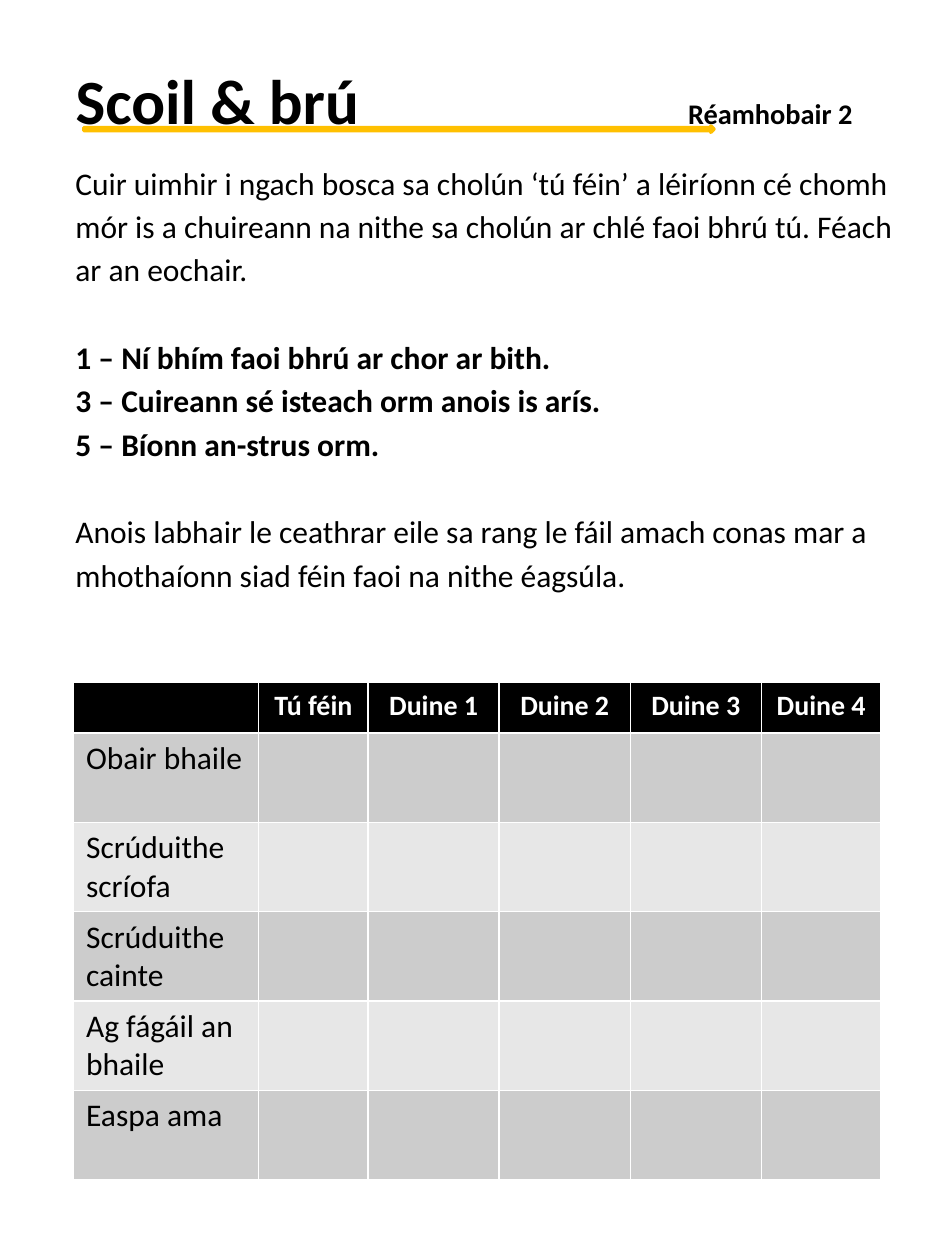
import pptx
import pptx.dml.color
import pptx.enum.shapes
import pptx.enum.text
import pptx.util
from lxml import etree

Pt = pptx.util.Pt
PP_ALIGN = pptx.enum.text.PP_ALIGN
COLOURS = {
    "text": "000000",
    "header_text": "FFFFFF",
    "header": "000000",
    "dark_row": "CCCCCC",
    "light_row": "E7E7E7",
    "arrow": "FFFF00",
    "arrow_line": "FFC000",
}


def colour(name):
    return pptx.dml.color.RGBColor.from_string(COLOURS[name])


def add_text(paragraph, text, size=18, bold=False, ink="text", align=PP_ALIGN.LEFT, before=0):
    """Append a formatted run and set the paragraph's alignment and spacing."""
    paragraph.alignment = align
    paragraph.space_before = Pt(before)
    run = paragraph.add_run()
    run.text = text
    run.font.name = "Calibri"
    run.font.size = Pt(size)
    run.font.bold = bold
    run.font.color.rgb = colour(ink)


presentation = pptx.Presentation()
presentation.slide_width = Pt(540)
presentation.slide_height = Pt(720)
slide = presentation.slides.add_slide(presentation.slide_layouts[5])

# Instructions: text, bold, starts a new block
instructions = [
    ("Cuir uimhir i ngach bosca sa cholún ‘tú féin’ a léiríonn cé chomh", False, False),
    ("mór is a chuireann na nithe sa cholún ar chlé faoi bhrú tú. Féach", False, False),
    ("ar an eochair.", False, False),
    ("1 – Ní bhím faoi bhrú ar chor ar bith.", True, True),
    ("3 – Cuireann sé isteach orm anois is arís.", True, False),
    ("5 – Bíonn an-strus orm.", True, False),
    ("Anois labhair le ceathrar eile sa rang le fáil amach conas mar a", False, True),
    ("mhothaíonn siad féin faoi na nithe éagsúla.", False, False),
]
body = slide.shapes.add_textbox(Pt(36), Pt(90), Pt(486), Pt(282)).text_frame
body.word_wrap = True
for index, (text, bold, new_block) in enumerate(instructions):
    paragraph = body.add_paragraph() if index else body.paragraphs[0]
    add_text(paragraph, text, bold=bold, before=28.4 if new_block else 3.2)

# Thin arrow under the title
arrow = slide.shapes.add_shape(
    pptx.enum.shapes.MSO_SHAPE.RIGHT_ARROW, Pt(48), Pt(72), Pt(360), Pt(3.6))
arrow.shadow.inherit = False
arrow.fill.solid()
arrow.fill.fore_color.rgb = colour("arrow")
arrow.line.color.rgb = colour("arrow_line")
arrow.line.width = Pt(2)

# Title, with the lesson label at a tab stop
title = slide.shapes.title
title.left, title.top, title.width, title.height = Pt(36), Pt(18), Pt(459), Pt(80)
frame = title.text_frame
frame.word_wrap = True
frame.auto_size = pptx.enum.text.MSO_AUTO_SIZE.NONE
frame.vertical_anchor = pptx.enum.text.MSO_ANCHOR.BOTTOM
frame.margin_bottom = Pt(19.7)
heading = frame.paragraphs[0]
add_text(heading, "Scoil & brú", size=36, bold=True)
add_text(heading, "\tRéamhobair 2", size=16.2, bold=True)
namespace = "{http://schemas.openxmlformats.org/drawingml/2006/main}"
tabs = etree.SubElement(heading._p.get_or_add_pPr(), namespace + "tabLst")
etree.SubElement(tabs, namespace + "tab", pos=str(Pt(350)), algn="l")

# Survey table; the default table style draws the white rules
headers = ["", "Tú féin", "Duine 1", "Duine 2", "Duine 3", "Duine 4"]
topics = ["Obair bhaile", "Scrúduithe scríofa", "Scrúduithe\ncainte",
          "Ag fágáil an\nbhaile", "Easpa ama"]
column_widths = [105.8, 62.6, 74.9, 74.9, 74.9, 68.4]
header_height, row_height = 26.7, 51.1
table = slide.shapes.add_table(
    len(topics) + 1, len(headers), Pt(42), Pt(390), Pt(sum(column_widths)),
    Pt(header_height + row_height * len(topics))).table
for column, width in zip(table.columns, column_widths):
    column.width = Pt(width)
for row_index, row in enumerate(table.rows):
    row.height = Pt(row_height if row_index else header_height)
    fill = ("light_row", "dark_row")[row_index % 2] if row_index else "header"
    for cell in row.cells:
        cell.fill.solid()
        cell.fill.fore_color.rgb = colour(fill)

for column_index, text in enumerate(headers):
    if text:
        add_text(table.cell(0, column_index).text_frame.paragraphs[0], text, size=16,
                 bold=True, ink="header_text", align=PP_ALIGN.CENTER)
for row_index, topic in enumerate(topics, start=1):
    cell_frame = table.cell(row_index, 0).text_frame
    for line_index, line in enumerate(topic.split("\n")):
        paragraph = cell_frame.add_paragraph() if line_index else cell_frame.paragraphs[0]
        add_text(paragraph, line)

presentation.save("out.pptx")
